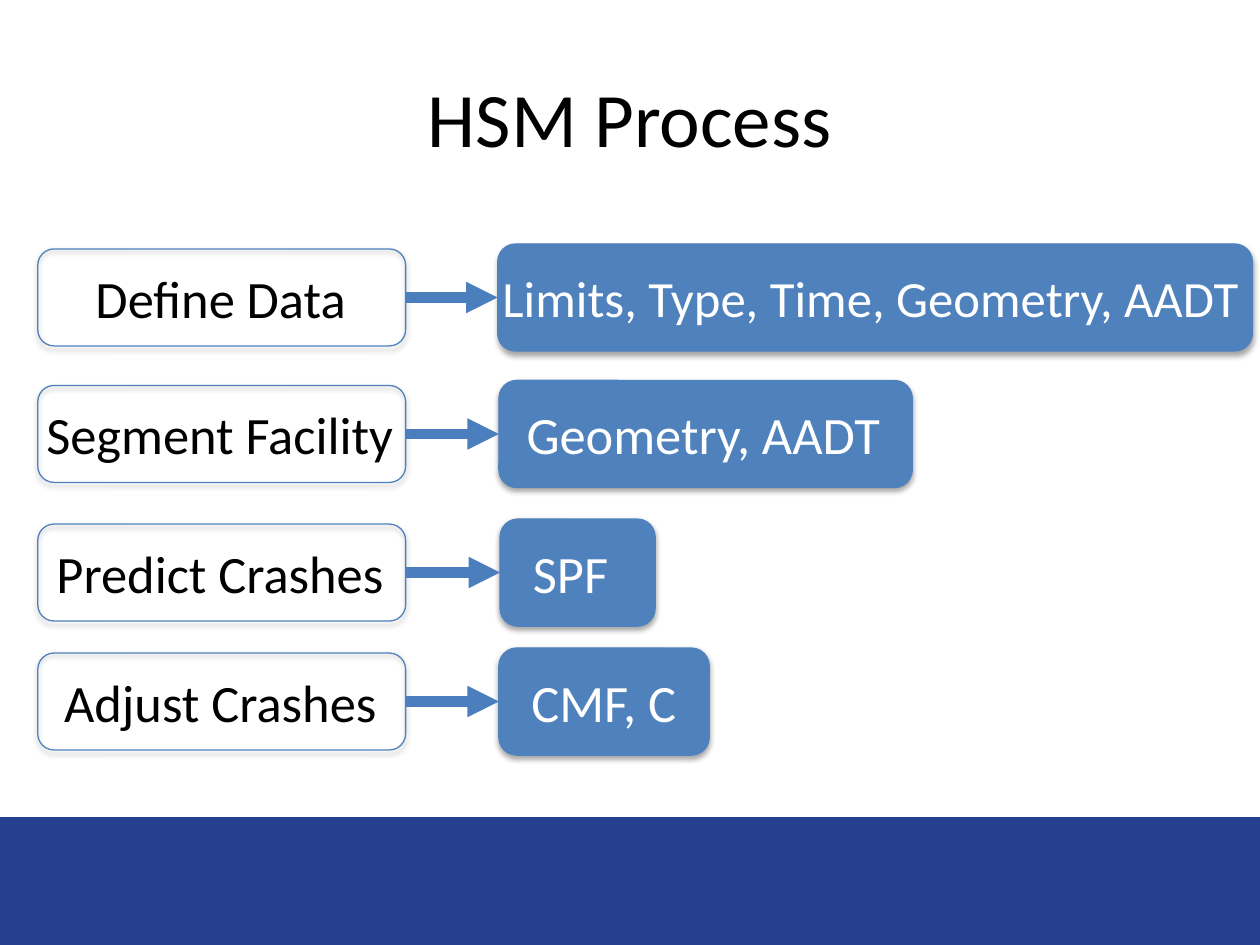
from lxml import etree
from pptx import Presentation
from pptx.dml.color import RGBColor
from pptx.enum.shapes import MSO_CONNECTOR, MSO_SHAPE
from pptx.enum.text import MSO_ANCHOR, PP_ALIGN
from pptx.oxml import parse_xml
from pptx.oxml.ns import qn
from pptx.util import Pt

ROUNDED = MSO_SHAPE.ROUNDED_RECTANGLE
RECTANGLE = MSO_SHAPE.RECTANGLE
STRAIGHT = MSO_CONNECTOR.STRAIGHT
MIDDLE = MSO_ANCHOR.MIDDLE
CENTER = PP_ALIGN.CENTER

SHADOW = (
    '<a:effectLst xmlns:a="http://schemas.openxmlformats.org/drawingml/2006/main">'
    '<a:outerShdw blurRad="40000" dist="23000" dir="5400000" rotWithShape="0">'
    '<a:srgbClr val="000000"><a:alpha val="35000"/></a:srgbClr>'
    '</a:outerShdw></a:effectLst>'
)
BLUE = "4F81BD"
ARROW_BLUE = "4B7EBC"
FOOTER_BLUE = "25408F"
BLACK = "000000"
WHITE = "FFFFFF"


def color(value):
    return RGBColor.from_string(value)


def add_card(left, middle, width, height, fill, text, text_left, text_width, size, text_color):
    card = page.shapes.add_shape(
        ROUNDED, Pt(left), Pt(middle - height / 2), Pt(width), Pt(height))
    if fill:
        card.fill.solid()
        card.fill.fore_color.rgb = color(fill)
    else:
        card.fill.background()
    card.line.color.rgb = color(BLUE)
    card.line.width = Pt(0.75)
    card._element.spPr.append(parse_xml(SHADOW))

    box = page.shapes.add_textbox(Pt(text_left), Pt(middle - 22), Pt(text_width), Pt(44))
    frame = box.text_frame
    frame.word_wrap = False
    frame.vertical_anchor = MIDDLE
    frame.text = text
    font = frame.paragraphs[0].runs[0].font
    font.name = "Calibri"
    font.size = Pt(size)
    font.color.rgb = color(text_color)
    return card


deck = Presentation()
deck.slide_width = Pt(720)
deck.slide_height = Pt(540)
page = deck.slides.add_slide(deck.slide_layouts[5])

footer = page.shapes.add_shape(RECTANGLE, Pt(0), Pt(468), Pt(720), Pt(72))
footer.shadow.inherit = False
footer.fill.solid()
footer.fill.fore_color.rgb = color(FOOTER_BLUE)
footer.line.color.rgb = color(FOOTER_BLUE)
footer.line.width = Pt(2)

title = page.shapes.title
title.left, title.top, title.width, title.height = Pt(36), Pt(21.6), Pt(648), Pt(90)
title.text_frame.text = "HSM Process"
title.text_frame.vertical_anchor = MIDDLE
title_para = title.text_frame.paragraphs[0]
title_para.alignment = CENTER
title_font = title_para.runs[0].font
title_font.name = "Calibri"
title_font.size = Pt(44)
title_font.color.rgb = color(BLACK)

steps = [
    (170, ("Define Data", 47.5, 160),
     284.4, 431.3, ("Limits, Type, Time, Geometry, AADT", 280, 440, 29)),
    (248, ("Segment Facility", 19.4, 216),
     285.1, 236.2, ("Geometry, AADT", 293.8, 221, 30)),
    (327.2, ("Predict Crashes", 25.2, 204.5),
     285.8, 88.6, ("SPF", 297.4, 58.3, 30)),
    (400.9, ("Adjust Crashes", 29.5, 195.8),
     285.1, 120.2, ("CMF, C", 296.6, 100.8, 30)),
]

for middle, step, input_left, input_width, inputs in steps:
    step_card = add_card(21.6, middle, 210.2, 55.4, None, *step, 30, BLACK)
    input_card = add_card(input_left, middle, input_width, 61.2, BLUE, *inputs, WHITE)

    arrow = page.shapes.add_connector(STRAIGHT, 0, 0, 0, 0)
    arrow.begin_connect(step_card, 3)
    arrow.end_connect(input_card, 1)
    arrow.line.color.rgb = color(ARROW_BLUE)
    arrow.line.width = Pt(6)
    etree.SubElement(arrow.line._get_or_add_ln(), qn("a:tailEnd"), type="triangle")
    etree.SubElement(arrow._element.spPr, qn("a:effectLst"))

deck.save("out.pptx")
